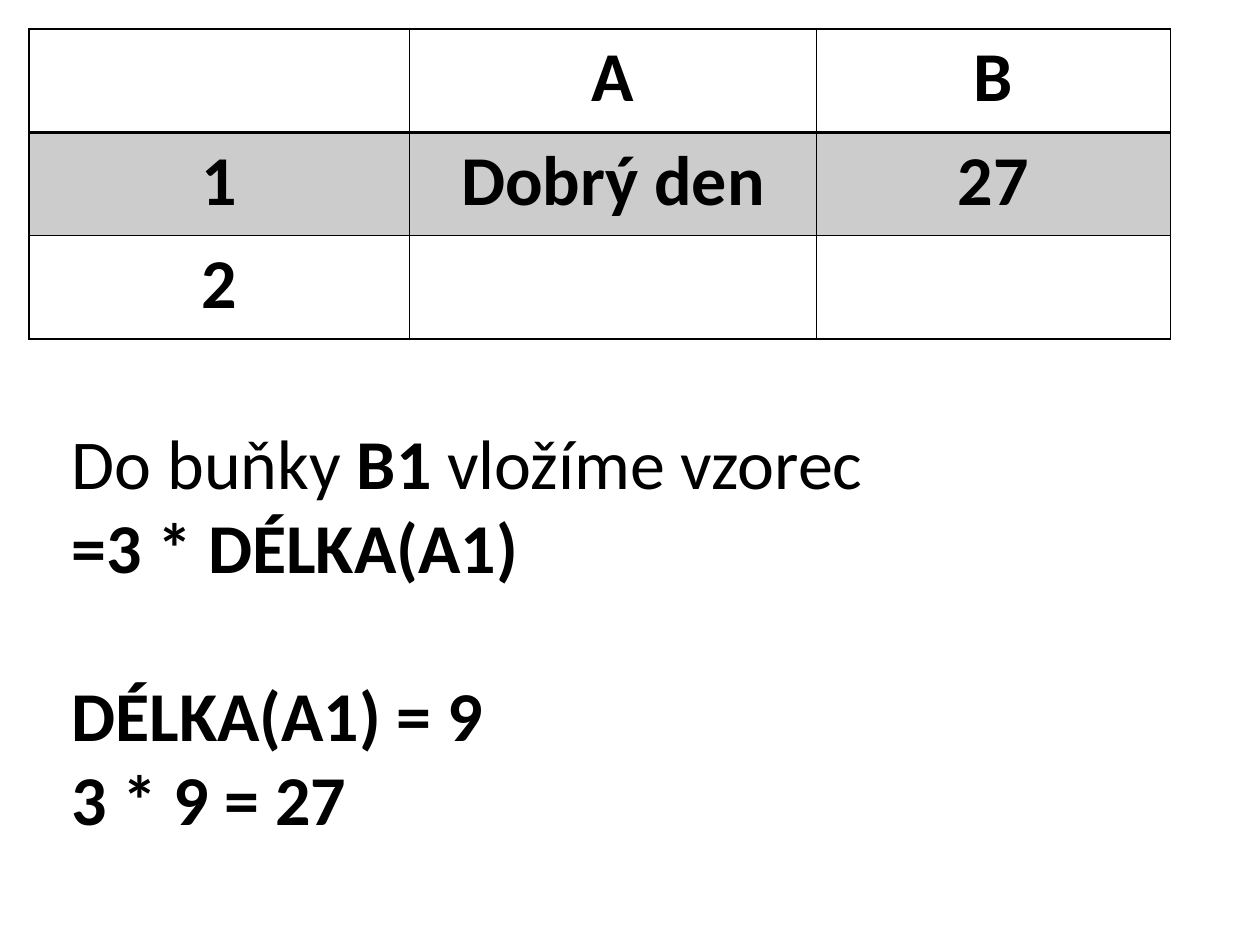
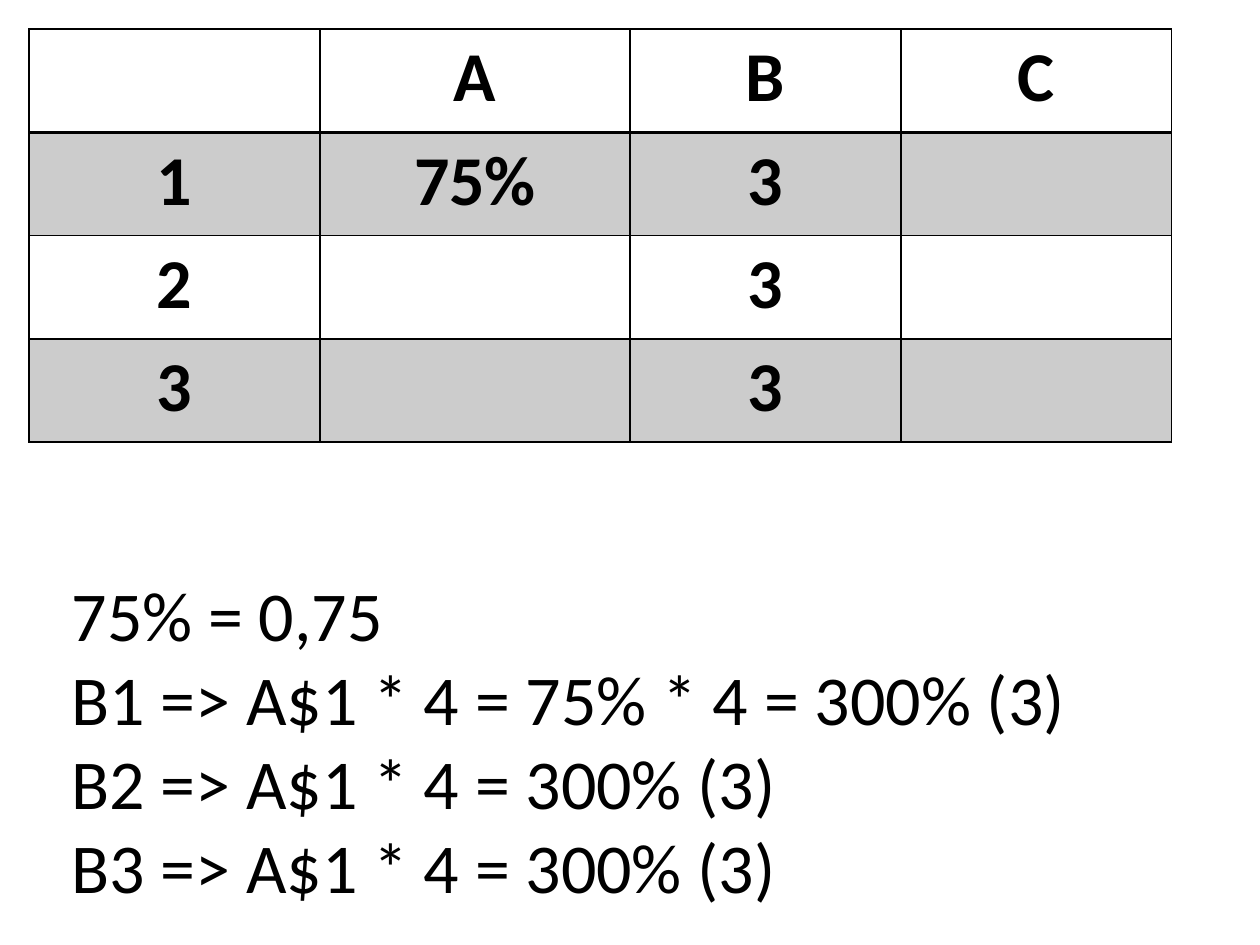
import pptx
import pptx.dml.color
import pptx.enum.text
import pptx.oxml
import pptx.oxml.ns
import pptx.util
from pptx.util import Inches

FONT = "Calibri"
SIZE = pptx.util.Pt(40)
BLACK = "000000"
BAND = "CCCCCC"
LEFT = TOP = 0.23
ROW_HEIGHT = 0.82
THIN, THICK = 1, 2


def color(value):
    return pptx.dml.color.RGBColor.from_string(value)


def style_paragraph(p, bold=None):
    p.font.name = FONT
    p.font.size = SIZE
    p.font.color.rgb = color(BLACK)
    p.font.bold = bold


def set_border(cell, side, width):
    tag = f"a:ln{side}"
    ln = pptx.oxml.parse_xml(
        f'<{tag} {pptx.oxml.ns.nsdecls("a")} w="{pptx.util.Pt(width)}">'
        f'<a:solidFill><a:srgbClr val="{BLACK}"/></a:solidFill></{tag}>'
    )
    cell._tc.get_or_add_tcPr().append(ln)


def style_cell(cell, row):
    widths = {
        "L": THIN,
        "R": THIN,
        "T": THICK if row == 1 else THIN,
        "B": THICK if row == 0 else THIN,
    }
    for side, width in widths.items():
        set_border(cell, side, width)
    if row % 2:
        cell.fill.solid()
        cell.fill.fore_color.rgb = color(BAND)
    else:
        cell.fill.background()
    p = cell.text_frame.paragraphs[0]
    p.alignment = pptx.enum.text.PP_ALIGN.CENTER
    style_paragraph(p, bold=True)


def add_sheet(slide, col_widths, rows):
    frame = slide.shapes.add_table(
        len(rows), len(col_widths), Inches(LEFT), Inches(TOP),
        Inches(sum(col_widths)), Inches(ROW_HEIGHT * len(rows)))
    table = frame.table
    table.first_row = table.horz_banding = False
    for column, width in zip(table.columns, col_widths):
        column.width = Inches(width)
    for i, values in enumerate(rows):
        table.rows[i].height = Inches(ROW_HEIGHT)
        for j, value in enumerate(values):
            cell = table.cell(i, j)
            cell.text = value
            style_cell(cell, i)


def add_explanation(slide, top, height, lines):
    box = slide.shapes.add_textbox(
        Inches(0.47), Inches(top), Inches(8.91), Inches(height))
    tf = box.text_frame
    tf.word_wrap = True
    tf.auto_size = pptx.enum.text.MSO_AUTO_SIZE.SHAPE_TO_FIT_TEXT
    for i, runs in enumerate(lines):
        p = tf.add_paragraph() if i else tf.paragraphs[0]
        weights = {bold for _, bold in runs}
        style_paragraph(p, bold=weights.pop() if len(weights) == 1 else None)
        for text, bold in runs:
            r = p.add_run()
            r.text = text
            if weights:
                r.font.bold = bold
    return tf


def build_length_slide(slide):
    add_sheet(slide, [3.02, 3.23, 2.81], [
        ["", "A", "B"],
        ["1", "Dobrý den", "27"],
        ["2", "", ""],
    ])
    tf = add_explanation(slide, 3.28, 3.47, [
        [("Do buňky ", False), ("B1", True), (" vložíme vzorec", False)],
        [("=3 * DÉLKA(A1)", True)],
        [("DÉLKA(A1) = 9", True)],
        [("3 * 9 = 27", True)],
    ])
    tf.paragraphs[2].space_before = pptx.util.Pt(48)


def build_percent_slide(slide):
    add_sheet(slide, [2.31, 2.46, 2.15, 2.15], [
        ["", "A", "B", "C"],
        ["1", "75%", "3", ""],
        ["2", "", "3", ""],
        ["3", "", "3", ""],
    ])
    lines = [
        "75% = 0,75",
        "B1 => A$1 * 4 = 75% * 4 = 300% (3)",
        "B2 => A$1 * 4 = 300% (3)",
        "B3 => A$1 * 4 = 300% (3)",
    ]
    add_explanation(slide, 4.49, 2.79, [[(line, False)] for line in lines])


def main():
    prs = pptx.Presentation()
    prs.slide_width = Inches(10)
    prs.slide_height = Inches(7.5)
    for build in (build_length_slide, build_percent_slide):
        build(prs.slides.add_slide(prs.slide_layouts[6]))
    prs.save("out.pptx")


if __name__ == "__main__":
    main()
